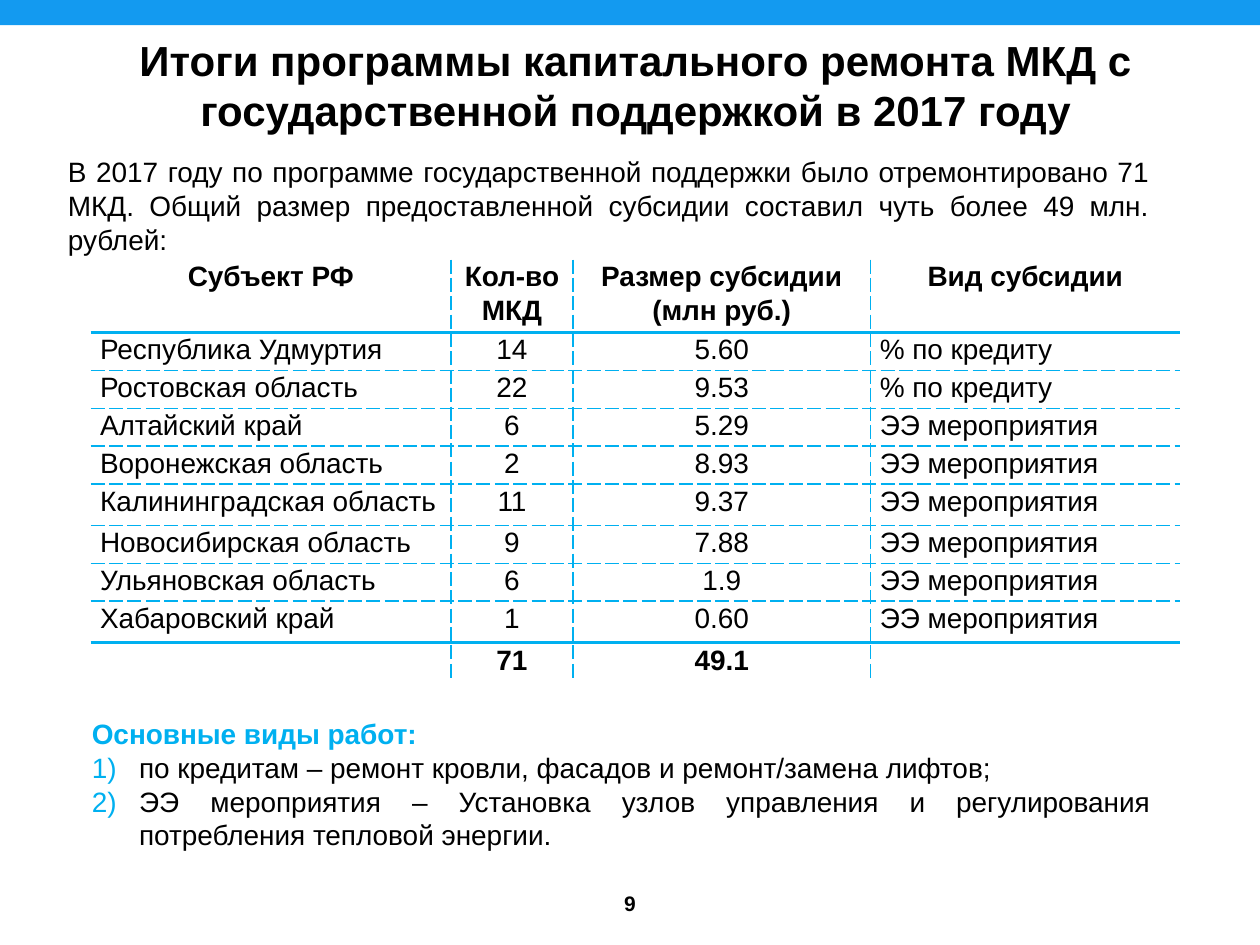
"""Build a slide on the results of the 2017 housing repair programme."""
from dataclasses import dataclass

import pptx
import pptx.dml.color
import pptx.enum.shapes
import pptx.enum.text
import pptx.oxml
import pptx.oxml.ns
import pptx.util

Pt = pptx.util.Pt
Align = pptx.enum.text.PP_ALIGN
Anchor = pptx.enum.text.MSO_ANCHOR
AutoSize = pptx.enum.text.MSO_AUTO_SIZE

FONT = "Arial"
BLACK = "000000"
ACCENT = "00B0F0"
BAND = "139AF0"
NAMESPACE = pptx.oxml.ns.nsdecls("a")
COLUMN_WIDTHS = (205.9, 69.8, 169.9, 177.1)
COLUMN_ALIGNS = (Align.LEFT, Align.CENTER, Align.CENTER, Align.LEFT)
ROW_HEIGHTS = (41.8, 21.6, 21.6, 21.6, 21.6, 23.8, 21.6, 21.6, 23.8, 21.6)
CREDIT = "% по кредиту"
ENERGY = "ЭЭ мероприятия"
ROWS = (
    ("Субъект РФ", "Кол-во МКД", "Размер субсидии (млн руб.)", "Вид субсидии"),
    ("Республика Удмуртия", "14", "5.60", CREDIT),
    ("Ростовская область", "22", "9.53", CREDIT),
    ("Алтайский край", "6", "5.29", ENERGY),
    ("Воронежская область", "2", "8.93", ENERGY),
    ("Калининградская область", "11", "9.37", ENERGY),
    ("Новосибирская область", "9", "7.88", ENERGY),
    ("Ульяновская область", "6", "1.9", ENERGY),
    ("Хабаровский край", "1", "0.60", ENERGY),
    ("", "71", "49.1", ""),
)


@dataclass(frozen=True)
class Line:
    text: str
    size: float = 16
    bold: bool = False
    color: str = BLACK
    align: Align = Align.JUSTIFY
    before: float = 0
    numbered: bool = False


@dataclass(frozen=True)
class TextBlock:
    left: float
    top: float
    width: float
    height: float
    lines: tuple[Line, ...]
    anchor: Anchor = Anchor.TOP
    auto_size: AutoSize = AutoSize.SHAPE_TO_FIT_TEXT


TEXT_BLOCKS = (
    TextBlock(328.3, 501.8, 63.4, 28.1, (
        Line("9", 12, True, align=Align.CENTER),
    ), Anchor.MIDDLE, AutoSize.NONE),
    TextBlock(11.5, 15.8, 703.4, 65.5, (
        Line("Итоги программы капитального ремонта МКД с "
             "государственной поддержкой в 2017 году", 24, True, align=Align.CENTER),
    ), Anchor.MIDDLE),
    TextBlock(31.7, 85, 632.2, 65.5, (
        Line("В 2017 году по программе государственной поддержки было "
             "отремонтировано 71 МКД. Общий размер предоставленной субсидии "
             "составил чуть более 49 млн. рублей:", before=12),
    )),
    TextBlock(45.4, 406.1, 619.2, 85, (
        Line("Основные виды работ: ", bold=True, color=ACCENT, before=12),
        Line("по кредитам – ремонт кровли, фасадов и ремонт/замена лифтов;",
             numbered=True),
        Line("ЭЭ мероприятия – Установка узлов управления и регулирования "
             "потребления тепловой энергии.", numbered=True),
    )),
)


def rgb(color: str) -> pptx.dml.color.RGBColor:
    return pptx.dml.color.RGBColor.from_string(color)


def write_line(para, line: Line) -> None:
    para.text = line.text
    para.alignment = line.align
    para.space_before = Pt(line.before)
    for span in para.runs:
        span.font.name = FONT
        span.font.size = Pt(line.size)
        span.font.bold = line.bold
        span.font.color.rgb = rgb(line.color)


def number_paragraph(para, indent: float) -> None:
    properties = para._p.get_or_add_pPr()
    properties.set("marL", str(Pt(indent)))
    properties.set("indent", str(-Pt(indent)))
    for markup in (
        f'<a:buClr {NAMESPACE}><a:srgbClr val="{ACCENT}"/></a:buClr>',
        f'<a:buAutoNum {NAMESPACE} type="arabicParenR"/>',
    ):
        properties.append(pptx.oxml.parse_xml(markup))


def draw_text(page, block: TextBlock) -> None:
    box = page.shapes.add_textbox(
        Pt(block.left), Pt(block.top), Pt(block.width), Pt(block.height))
    frame = box.text_frame
    frame.word_wrap = True
    frame.auto_size = block.auto_size
    frame.vertical_anchor = block.anchor
    for index, line in enumerate(block.lines):
        para = frame.add_paragraph() if index else frame.paragraphs[0]
        write_line(para, line)
        if line.numbered:
            number_paragraph(para, 27)


def add_border(cell, side: str, width: float) -> None:
    dash = "dash" if width == 1 else "solid"
    paint = (f'<a:solidFill><a:srgbClr val="{ACCENT}"/></a:solidFill>'
             f'<a:prstDash val="{dash}"/>') if width else "<a:noFill/>"
    cell._tc.get_or_add_tcPr().append(pptx.oxml.parse_xml(
        f'<a:ln{side} {NAMESPACE} w="{Pt(width)}">{paint}</a:ln{side}>'))


def horizontal_rule(index: int) -> float:
    if index in (0, len(ROWS)):
        return 0
    return 2.25 if index in (1, len(ROWS) - 1) else 1


def draw_table(page, left: float, top: float) -> None:
    table = page.shapes.add_table(
        len(ROWS), len(COLUMN_WIDTHS), Pt(left), Pt(top),
        Pt(sum(COLUMN_WIDTHS)), Pt(sum(ROW_HEIGHTS))).table
    table.first_row = table.horz_banding = False
    for column, width in zip(table.columns, COLUMN_WIDTHS):
        column.width = Pt(width)
    for row, height in zip(table.rows, ROW_HEIGHTS):
        row.height = Pt(height)
    last_row, last_column = len(ROWS) - 1, len(COLUMN_WIDTHS) - 1
    for r, values in enumerate(ROWS):
        for c, value in enumerate(values):
            cell = table.cell(r, c)
            cell.margin_left = cell.margin_right = Pt(5.4)
            cell.margin_top = cell.margin_bottom = Pt(0)
            para = cell.text_frame.paragraphs[0]
            align = COLUMN_ALIGNS[c] if r else Align.CENTER
            write_line(para, Line(value, bold=r in (0, last_row), align=align))
            if value:
                para.line_spacing = 1.07
            add_border(cell, "L", 1 if c else 0)
            add_border(cell, "R", 1 if c < last_column else 0)
            add_border(cell, "T", horizontal_rule(r))
            add_border(cell, "B", horizontal_rule(r + 1))
            cell.fill.background()


def draw_band(page, width: float, height: float) -> None:
    band = page.shapes.add_shape(
        pptx.enum.shapes.MSO_SHAPE.RECTANGLE, Pt(0), Pt(0), Pt(width), Pt(height))
    band.shadow.inherit = False
    band.fill.solid()
    band.fill.fore_color.rgb = rgb(BAND)
    band.line.fill.background()


def main() -> None:
    deck = pptx.Presentation()
    deck.slide_width, deck.slide_height = Pt(720), Pt(540)
    page = deck.slides.add_slide(deck.slide_layouts[6])
    draw_band(page, 720, 14.4)
    for block in TEXT_BLOCKS:
        draw_text(page, block)
    draw_table(page, 51.8, 148.3)
    deck.save("out.pptx")


if __name__ == "__main__":
    main()
